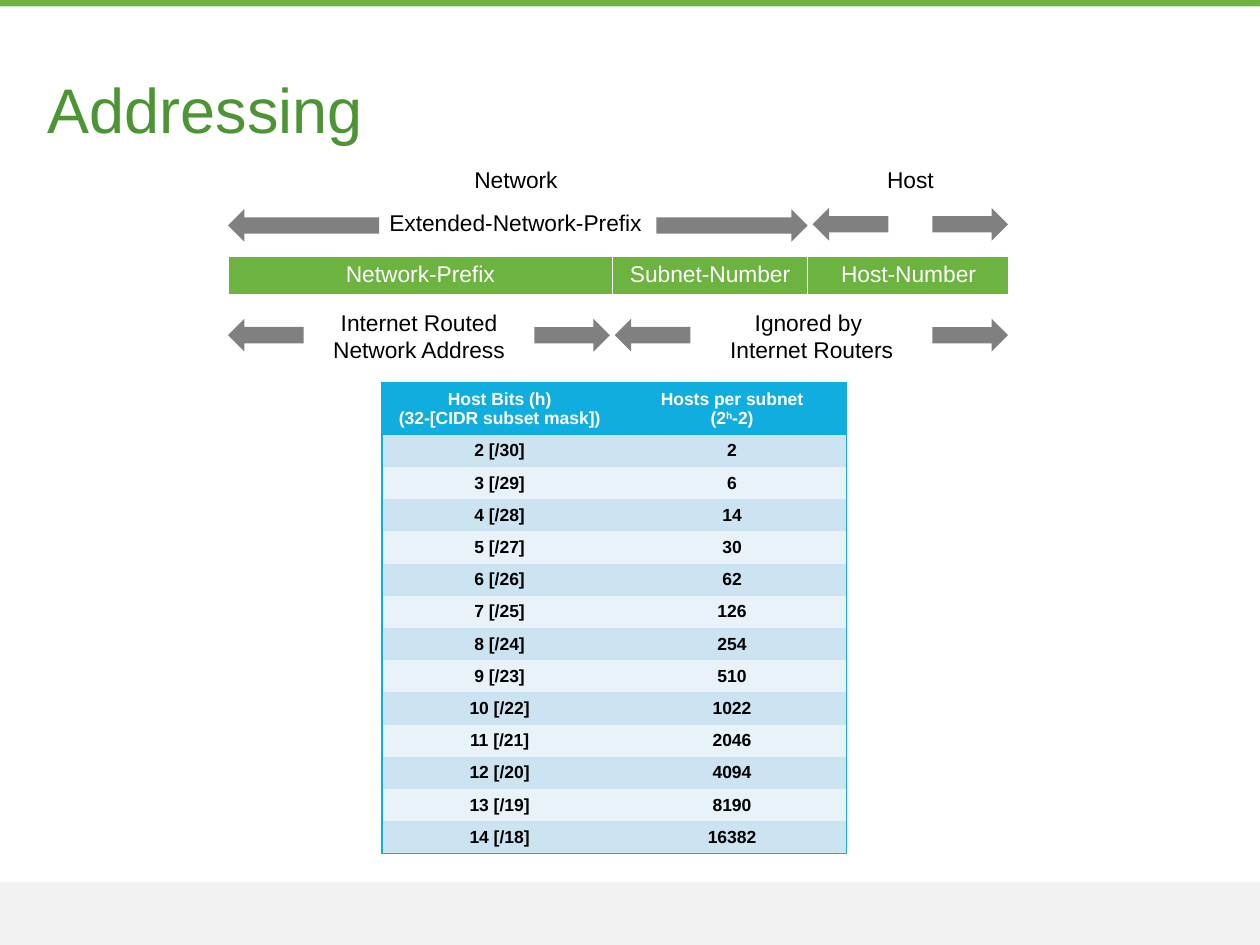
from typing import NamedTuple

import lxml.etree
import pptx
import pptx.dml.color
import pptx.enum.shapes
import pptx.enum.text
import pptx.oxml.ns
import pptx.util

COLORS = {
    "white": "FFFFFF", "black": "000000", "footer": "F2F2F2", "green": "6CB33F",
    "title": "4D9435", "blue": "10AEDE", "dark band": "CCE3F2",
    "light band": "E7F2F9", "arrow": "808080",
}
FONT = "Arial"
# The slide is a grid of 100 columns and 75 rows; all positions are in grid units.
COLUMNS, ROWS = 100, 75
WIDTH, HEIGHT = pptx.util.Inches(10), pptx.util.Inches(7.5)
NO_STYLE = "{2D5ABB26-0587-4C30-8999-92F81FD0307C}"
SHAPES = pptx.enum.shapes.MSO_SHAPE
ALIGN = pptx.enum.text.PP_ALIGN
ANCHOR = pptx.enum.text.MSO_ANCHOR


class Box(NamedTuple):
    left: float
    top: float
    width: float
    height: float


class Label(NamedTuple):
    text: str
    box: Box


class Span(NamedTuple):
    left: float
    right: float
    top: float
    arrow: float


LABELS = [
    Label("Extended-Network-Prefix", Box(29.3, 16.1, 23.2, 3.3)),
    Label("Internet Routed\nNetwork Address", Box(24.1, 24, 18.3, 5.5)),
    Label("Ignored by \nInternet Routers", Box(54.8, 24, 19.2, 5.5)),
    Label("Network", Box(18.1, 12.7, 45.7, 3.3)),
    Label("Host", Box(64.5, 12.7, 15.5, 3.3)),
]
SPANS = [
    Span(18.1, 64.1, 16.6, 12),
    Span(64.5, 80, 16.5, 6),
    Span(18.1, 48.4, 25.3, 6),
    Span(48.8, 80, 25.3, 6),
]
ARROW_HEIGHT = 2.6


def across(columns: float) -> int:
    return round(WIDTH * columns / COLUMNS)


def down(rows: float) -> int:
    return round(HEIGHT * rows / ROWS)


def place(box: Box) -> tuple:
    """Turn grid units into slide lengths."""
    return across(box.left), down(box.top), across(box.width), down(box.height)


def rgb(name: str) -> pptx.dml.color.RGBColor:
    return pptx.dml.color.RGBColor.from_string(COLORS[name])


def format_text(tf, size: float, color: str, align=ALIGN.CENTER, bold=False) -> None:
    for p in tf.paragraphs:
        p.alignment = align
        for r in p.runs:
            r.font.name = FONT
            r.font.size = pptx.util.Pt(size)
            r.font.bold = bold
            r.font.color.rgb = rgb(color)


def add_block(s, box: Box, color: str, kind=SHAPES.RECTANGLE):
    sp = s.shapes.add_shape(kind, *place(box))
    sp.shadow.inherit = False
    sp.fill.solid()
    sp.fill.fore_color.rgb = rgb(color)
    sp.line.fill.background()
    return sp


def add_title(s, text: str) -> None:
    sp = s.shapes.title
    sp.left, sp.top, sp.width, sp.height = place(Box(3.8, 3, 92.5, 12.5))
    tf = sp.text_frame
    tf.text = text
    tf.margin_left = tf.margin_right = tf.margin_top = 0
    tf.margin_bottom = pptx.util.Inches(0.05)
    tf.vertical_anchor = ANCHOR.MIDDLE
    tf.paragraphs[0].line_spacing = 0.9
    format_text(tf, 36, "title", ALIGN.LEFT)


def add_label(s, label: Label) -> None:
    tf = s.shapes.add_textbox(*place(label.box)).text_frame
    tf.word_wrap = True
    tf.auto_size = pptx.enum.text.MSO_AUTO_SIZE.SHAPE_TO_FIT_TEXT
    tf.text = label.text
    format_text(tf, 13, "black")


def add_span(s, span: Span) -> None:
    """Draw two arrows that point out to the ends of the span."""
    for left, rotation in ((span.left, 0), (span.right - span.arrow, 180)):
        box = Box(left, span.top, span.arrow, ARROW_HEIGHT)
        add_block(s, box, "arrow", SHAPES.LEFT_ARROW).rotation = rotation


def add_grid(s, left: float, top: float, widths: list, heights: list):
    box = Box(left, top, sum(widths), sum(heights))
    table = s.shapes.add_table(len(heights), len(widths), *place(box)).table
    table._tbl.tblPr.find(pptx.oxml.ns.qn("a:tableStyleId")).text = NO_STYLE
    for column, width in zip(table.columns, widths):
        column.width = across(width)
    for row, height in zip(table.rows, heights):
        row.height = down(height)
    return table


def set_cell(cell, text: str, fill: str, borders: dict) -> None:
    """Fill a cell; borders maps a side (L, R, T, B) to a colour and a width."""
    cell.text = text
    qn = pptx.oxml.ns.qn
    for side in "LRTB":
        if side in borders:
            color, points = borders[side]
            ln = lxml.etree.SubElement(cell._tc.get_or_add_tcPr(), qn(f"a:ln{side}"),
                                       w=str(pptx.util.Pt(points)))
            paint = lxml.etree.SubElement(ln, qn("a:solidFill"))
            lxml.etree.SubElement(paint, qn("a:srgbClr"), val=COLORS[color])
    cell.fill.solid()
    cell.fill.fore_color.rgb = rgb(fill)


def add_address_bar(s) -> None:
    parts = ["Network-Prefix", "Subnet-Number", "Host-Number"]
    table = add_grid(s, 18.1, 20.3, [30.5, 15.5, 16], [3.2])
    borders = {side: ("white", 1) for side in "LRT"} | {"B": ("white", 3)}
    for cell, part in zip(table.rows[0].cells, parts):
        set_cell(cell, part, "green", borders)
        format_text(cell.text_frame, 13, "white")


def add_hosts_table(s) -> None:
    header = ("Host Bits (h)\n(32-[CIDR subset mask])", "Hosts per subnet\n(2")
    rows = [header] + [(f"{h} [/{32 - h}]", str(2**h - 2)) for h in range(2, 15)]
    last = len(rows) - 1
    table = add_grid(s, 30.3, 30.4, [18.7, 18.2], [4.1] + [2.4] * last)
    for i, row in enumerate(rows):
        fill = "blue" if i == 0 else "dark band" if i % 2 else "light band"
        ends = "T" if i == 0 else "B" if i == last else ""
        for cell, text, side in zip(table.rows[i].cells, row, "LR"):
            set_cell(cell, text, fill, {edge: ("blue", 1) for edge in side + ends})
            cell.vertical_anchor = ANCHOR.MIDDLE
            format_text(cell.text_frame, 10, "black" if i else "white", bold=True)
    tf = table.cell(0, 1).text_frame
    for text in ("h", "-2)"):
        tf.paragraphs[1].add_run().text = text
    format_text(tf, 10, "white", bold=True)
    tf.paragraphs[1].runs[1].font._element.set("baseline", "30000")


def main() -> None:
    prs = pptx.Presentation()
    prs.slide_width, prs.slide_height = WIDTH, HEIGHT
    s = prs.slides.add_slide(prs.slide_layouts[5])
    add_block(s, Box(0, 70, COLUMNS, 5), "footer")
    add_block(s, Box(0, 0, COLUMNS, 0.5), "green")
    add_title(s, "Addressing")
    add_hosts_table(s)
    add_address_bar(s)
    for label in LABELS:
        add_label(s, label)
    for span in SPANS:
        add_span(s, span)
    prs.save("out.pptx")


if __name__ == "__main__":
    main()
